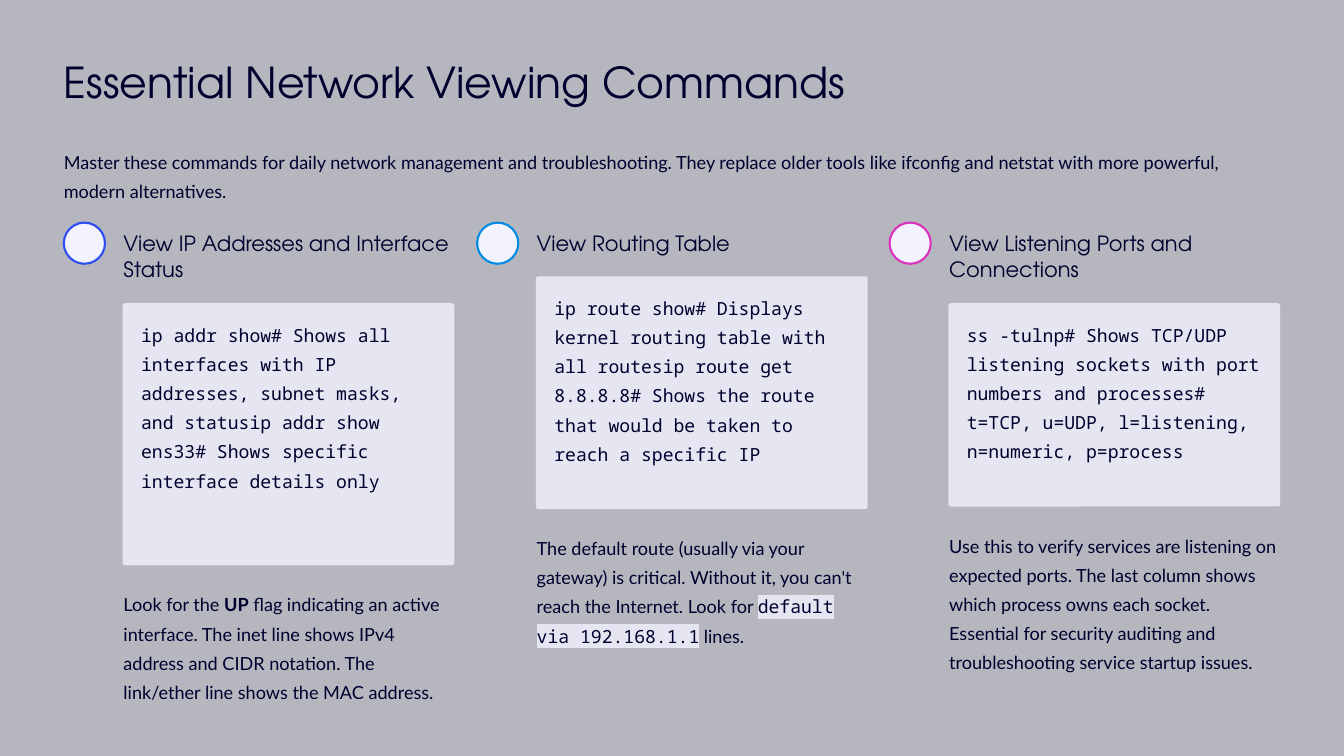
"""Build a slide of essential network viewing commands in three columns."""
from lxml import etree
from pptx import Presentation
from pptx.dml.color import RGBColor
from pptx.enum.shapes import MSO_SHAPE
from pptx.oxml.ns import qn
from pptx.util import Emu, Pt

RECTANGLE = MSO_SHAPE.RECTANGLE
ROUNDED = MSO_SHAPE.ROUNDED_RECTANGLE
SCALE = 9144
COLORS = {
    "page": "000000", "ink": "00002E", "light": "F3F3FF", "panel": "E6E6F2",
    "blue": "2D4DF2", "sky": "018CE1", "pink": "DA33BF",
}
TITLE_FONT = "TeX Gyre Adventor"
BODY_FONT = "Lato"
CODE_FONT = "Noto Sans Mono"
CODE = {"font": CODE_FONT, "highlight": "panel"}

PAGE_WIDTH = 1600
PAGE_HEIGHT = 900
LEFT = 76
TWO_COLUMN_STEPS = 983
COLUMN_WIDTH = 393
TEXT_INDENT = 71
HEADING_TOP = 272
HEADING_LINE = 32
NOTE_LINE = 35
GAP = 25

COLUMNS = [
    {
        "accent": "blue", "heading": "View IP Addresses and Interface Status",
        "heading_lines": 2, "panel_height": 312, "note_lines": 4,
        "code": "ip addr show# Shows all interfaces with IP addresses, subnet masks, "
                "and statusip addr show ens33# Shows specific interface details only",
        "note": [
            ("Look for the ", {}),
            ("UP", {"bold": True}),
            (" flag indicating an active interface. The inet line shows IPv4 address "
             "and CIDR notation. The link/ether line shows the MAC address.", {}),
        ],
    },
    {
        "accent": "sky", "heading": "View Routing Table",
        "heading_lines": 1, "panel_height": 277, "note_lines": 4,
        "code": "ip route show# Displays kernel routing table with all routesip route get "
                "8.8.8.8# Shows the route that would be taken to reach a specific IP",
        "note": [
            ("The default route (usually via your gateway) is critical. Without it, "
             "you can't reach the Internet. Look for ", {}),
            ("default via 192.168.1.1", CODE),
            (" lines.", {}),
        ],
    },
    {
        "accent": "pink", "heading": "View Listening Ports and Connections",
        "heading_lines": 2, "panel_height": 242, "note_lines": 5,
        "code": "ss -tulnp# Shows TCP/UDP listening sockets with port numbers and "
                "processes# t=TCP, u=UDP, l=listening, n=numeric, p=process",
        "note": [
            ("Use this to verify services are listening on expected ports. The last "
             "column shows which process owns each socket. Essential for security "
             "auditing and troubleshooting service startup issues.", {}),
        ],
    },
]


def px(*lengths):
    """Turn px lengths into EMU."""
    return [Emu(length * SCALE) for length in lengths]


def color(name):
    """Look up a named colour."""
    return RGBColor.from_string(COLORS[name])


def add_span(para, text, font=BODY_FONT, size=15.5, bold=False, highlight=None):
    """Append formatted text to a paragraph."""
    span = para.add_run()
    span.text = text
    span.font.size = Pt(size)
    span.font.bold = bold
    span.font.color.rgb = color("ink")
    if highlight:
        mark = etree.Element(qn("a:highlight"))
        etree.SubElement(mark, qn("a:srgbClr")).set("val", COLORS[highlight])
        span.font._element.find(qn("a:solidFill")).addnext(mark)
    span.font.name = font


class Page:
    """Draw styled elements on one slide."""

    def __init__(self, deck):
        """Add a blank slide with the page colour."""
        self.slide = deck.slides.add_slide(deck.slide_layouts[6])
        self.slide.background.fill.solid()
        self.slide.background.fill.fore_color.rgb = color("page")

    def text(self, left, top, width, height, spans, leading=25):
        """Add a text box without margins."""
        box = self.slide.shapes.add_textbox(*px(left, top, width, height))
        frame = box.text_frame
        frame.word_wrap = True
        frame.margin_left = frame.margin_right = 0
        frame.margin_top = frame.margin_bottom = 0
        para = frame.paragraphs[0]
        para.line_spacing = Pt(leading)
        for text, style in spans:
            add_span(para, text, **style)

    def block(self, left, top, width, height, fill, radius=0, line=None, opacity=100):
        """Add a filled rectangle with optional rounding, outline and transparency."""
        kind = ROUNDED if radius else RECTANGLE
        shape = self.slide.shapes.add_shape(kind, *px(left, top, width, height))
        if radius:
            shape.adjustments[0] = radius / min(width, height)
        shape.shadow.inherit = False
        shape.fill.solid()
        shape.fill.fore_color.rgb = color(fill)
        if opacity < 100:
            tint = shape._element.spPr.find(qn("a:solidFill")).find(qn("a:srgbClr"))
            etree.SubElement(tint, qn("a:alpha")).set("val", str(opacity * 1000))
        if line:
            shape.line.color.rgb = color(line)
            shape.line.width = Pt(1.8)
        else:
            shape.line.fill.background()

    def column(self, left, accent, heading, heading_lines, code, panel_height,
               note, note_lines):
        """Add a marker, heading, code panel and note."""
        text_left = left + TEXT_INDENT
        heading_height = heading_lines * HEADING_LINE
        panel_top = HEADING_TOP + heading_height + GAP
        note_top = panel_top + panel_height + GAP
        self.block(left, 265, 49, 49, "light", 24.5, accent)
        self.text(text_left, HEADING_TOP, COLUMN_WIDTH, heading_height,
                  [(heading, {"font": TITLE_FONT, "size": 18})], leading=23)
        self.block(text_left - 1, panel_top, COLUMN_WIDTH + 2, panel_height, "panel", 3)
        self.text(text_left + 21, panel_top + 16, 352, panel_height - 33, [(code, CODE)])
        self.text(text_left, note_top, COLUMN_WIDTH, note_lines * NOTE_LINE, note)


def main():
    """Build and save the deck."""
    deck = Presentation()
    deck.slide_width, deck.slide_height = px(PAGE_WIDTH, PAGE_HEIGHT)
    page = Page(deck)
    page.block(0, 0, PAGE_WIDTH, PAGE_HEIGHT, "light", opacity=75)
    page.text(LEFT, 63, 945, 64,
              [("Essential Network Viewing Commands", {"font": TITLE_FONT, "size": 36.5})],
              leading=46)
    page.text(LEFT, 171, 1447, 70,
              [("Master these commands for daily network management and troubleshooting. "
                "They replace older tools like ifconfig and netstat with more powerful, "
                "modern alternatives.", {})])
    for index, content in enumerate(COLUMNS):
        page.column(LEFT + (index * TWO_COLUMN_STEPS + 1) // 2, **content)
    deck.save("out.pptx")


if __name__ == "__main__":
    main()
